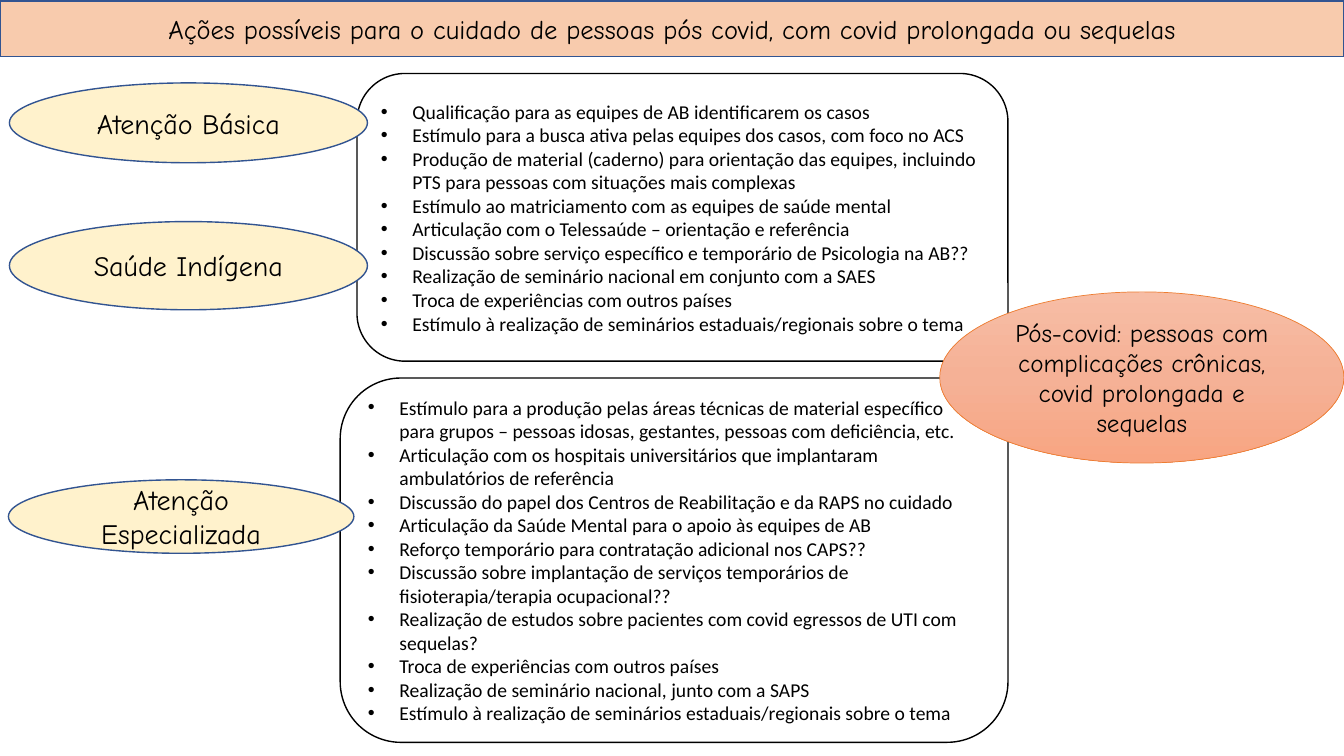
import copy

import pptx
import pptx.dml.color
import pptx.enum.shapes
import pptx.enum.text
import pptx.oxml
import pptx.oxml.ns
import pptx.util

RGBColor = pptx.dml.color.RGBColor
BLACK = RGBColor(0x00, 0x00, 0x00)
BLUE = RGBColor(0x32, 0x54, 0x91)
ORANGE = RGBColor(0xED, 0x7D, 0x31)
PEACH = RGBColor(0xF8, 0xCB, 0xAD)
CREAM = RGBColor(0xFF, 0xF2, 0xCC)
SALMON_STOPS = [
    RGBColor(0xF7, 0xBD, 0xA5),
    RGBColor(0xF5, 0xB1, 0x96),
    RGBColor(0xF8, 0xA5, 0x82),
]

SHAPES = pptx.enum.shapes.MSO_SHAPE
ALIGN = pptx.enum.text.PP_ALIGN
PX = 9525
SLIDE_WIDTH, SLIDE_HEIGHT = 1280, 720
BULLET_INDENT = 30

TITLE_FONT = {"name": "Comic Neue", "size": pptx.util.Pt(19)}
CARE_FONT = {"name": "Comic Neue", "size": pptx.util.Pt(20)}
OUTCOME_FONT = {"name": "Comic Neue", "size": pptx.util.Pt(18)}
ACTION_FONT = {"name": "Calibri", "size": pptx.util.Pt(14)}

TITLE = "Ações possíveis para o cuidado de pessoas pós covid, com covid prolongada ou sequelas"
OUTCOME = "Pós-covid: pessoas com complicações crônicas, covid prolongada e sequelas"
PRIMARY_ACTIONS = [
    "Qualificação para as equipes de AB identificarem os casos",
    "Estímulo para a busca ativa pelas equipes dos casos, com foco no ACS",
    "Produção de material (caderno) para orientação das equipes, incluindo PTS para pessoas com situações mais complexas",
    "Estímulo ao matriciamento com as equipes de saúde mental",
    "Articulação com o Telessaúde – orientação e referência",
    "Discussão sobre serviço específico e temporário de Psicologia na AB??",
    "Realização de seminário nacional em conjunto com a SAES",
    "Troca de experiências com outros países",
    "Estímulo à realização de seminários estaduais/regionais sobre o tema",
]
SPECIALIZED_ACTIONS = [
    "Estímulo para a produção pelas áreas técnicas de material específico para grupos – pessoas idosas, gestantes, pessoas com deficiência, etc.",
    "Articulação com os hospitais universitários que implantaram ambulatórios de referência",
    "Discussão do papel dos Centros de Reabilitação e da RAPS no cuidado",
    "Articulação da Saúde Mental para o apoio às equipes de AB",
    "Reforço temporário para contratação adicional nos CAPS??",
    "Discussão sobre implantação de serviços temporários de fisioterapia/terapia ocupacional??",
    "Realização de estudos sobre pacientes com covid egressos de UTI com sequelas?",
    "Troca de experiências com outros países",
    "Realização de seminário nacional, junto com a SAPS",
    "Estímulo à realização de seminários estaduais/regionais sobre o tema",
]
ACTION_PANELS = [
    ((340, 70, 620, 274), PRIMARY_ACTIONS),
    ((324, 360, 636, 347), SPECIALIZED_ACTIONS),
]
CARE_LEVELS = [
    ((9, 79, 341, 76), "Atenção Básica"),
    ((9, 211, 341, 84), "Saúde Indígena"),
    ((8, 457, 329, 70), "Atenção Especializada"),
]


def add_outline(slide, kind, box, line_color, line_width=1):
    """Add an unfilled, shadowless preset shape in a pixel box."""
    shape = slide.shapes.add_shape(kind, *(length * PX for length in box))
    shape.shadow.inherit = False
    shape.fill.background()
    shape.line.color.rgb = line_color
    shape.line.width = pptx.util.Pt(line_width)
    return shape


def write_paragraphs(shape, texts, font_format, alignment):
    """Write texts as paragraphs centred vertically in the shape."""
    frame = shape.text_frame
    frame.word_wrap = True
    frame.vertical_anchor = pptx.enum.text.MSO_ANCHOR.MIDDLE
    frame.text = "\n".join(texts)
    for paragraph in frame.paragraphs:
        paragraph.alignment = alignment
        font = paragraph.runs[0].font
        font.color.rgb = BLACK
        for name, value in font_format.items():
            setattr(font, name, value)


def add_label(slide, kind, box, text, font_format, fill_color):
    """Add a blue-outlined shape with one centred text."""
    shape = add_outline(slide, kind, box, BLUE)
    shape.fill.solid()
    shape.fill.fore_color.rgb = fill_color
    write_paragraphs(shape, [text], font_format, ALIGN.CENTER)


def add_action_panel(slide, box, actions):
    """Add a rounded panel with a bulleted list of actions."""
    panel = add_outline(slide, SHAPES.ROUNDED_RECTANGLE, box, BLACK)
    write_paragraphs(panel, actions, ACTION_FONT, ALIGN.LEFT)
    for paragraph in panel.text_frame.paragraphs:
        properties = paragraph._p.get_or_add_pPr()
        properties.set("marL", str(BULLET_INDENT * PX))
        properties.set("indent", str(-BULLET_INDENT * PX))
        for tag, attribute, value in [("a:buFont", "typeface", "Arial"), ("a:buChar", "char", "•")]:
            bullet = pptx.oxml.parse_xml(f'<{tag} {pptx.oxml.ns.nsdecls("a")} {attribute}="{value}"/>')
            properties.append(bullet)


def add_outcome(slide, box):
    """Add the gradient ellipse naming the people cared for."""
    ellipse = add_outline(slide, SHAPES.OVAL, box, ORANGE, 0.5)
    ellipse.fill.gradient()
    ellipse.fill.gradient_angle = 270
    stop_list = ellipse._element.spPr.find(".//" + pptx.oxml.ns.qn("a:gsLst"))
    stop_list.insert(1, copy.deepcopy(stop_list[0]))
    for index, (stop, color) in enumerate(zip(ellipse.fill.gradient_stops, SALMON_STOPS)):
        stop.position = index / 2
        stop.color.rgb = color
    write_paragraphs(ellipse, [OUTCOME], OUTCOME_FONT, ALIGN.CENTER)


def main():
    """Build the slide and save the presentation."""
    presentation = pptx.Presentation()
    presentation.slide_width = SLIDE_WIDTH * PX
    presentation.slide_height = SLIDE_HEIGHT * PX
    slide = presentation.slides.add_slide(presentation.slide_layouts[6])
    add_label(slide, SHAPES.RECTANGLE, (0, 1, SLIDE_WIDTH, 53), TITLE, TITLE_FONT, PEACH)
    for box, actions in ACTION_PANELS:
        add_action_panel(slide, box, actions)
    for box, text in CARE_LEVELS:
        add_label(slide, SHAPES.OVAL, box, text, CARE_FONT, CREAM)
    add_outcome(slide, (895, 278, 385, 163))
    presentation.save("out.pptx")


if __name__ == "__main__":
    main()
